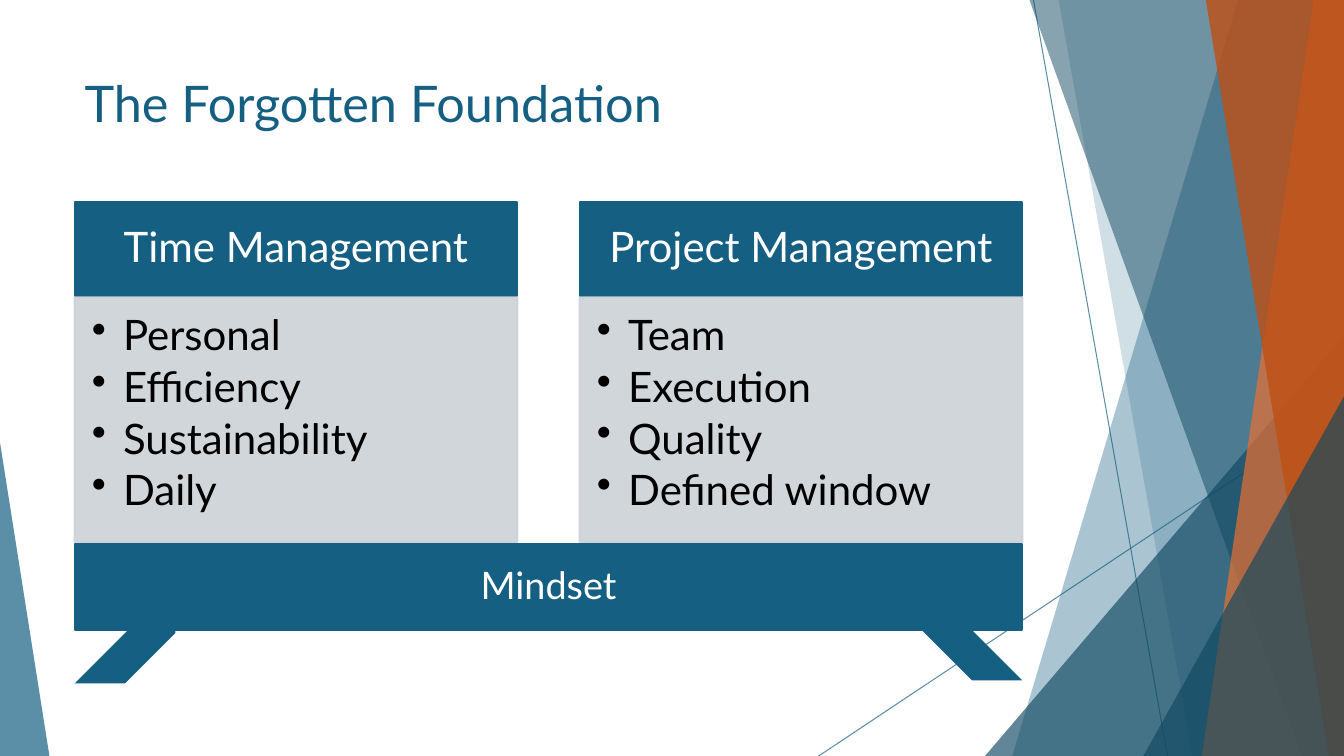
from lxml.etree import SubElement
from pptx import Presentation
from pptx.dml.color import RGBColor
from pptx.enum.shapes import MSO_CONNECTOR as CONNECTOR, MSO_SHAPE as SHAPE
from pptx.enum.text import MSO_ANCHOR as ANCHOR, PP_ALIGN as ALIGN
from pptx.oxml.ns import qn
from pptx.util import Pt

PX = 9144
WIDTH, HEIGHT = 1333, 750
COLORS = {
    "blue": "156082",
    "navy": "104862",
    "orange": "E97132",
    "rust": "C04F15",
    "grey": "CCD2D8",
    "white": "FFFFFF",
    "black": "000000",
}


class SlideBuilder:
    font_name = "Lato"

    def __init__(self, slide):
        self.slide = slide
        self.shapes = slide.shapes

    def paint(self, fill, color, opacity=100):
        fill.solid()
        fill.fore_color.rgb = RGBColor.from_string(COLORS[color])
        if opacity < 100:
            for rgb in fill._xPr.find(qn("a:solidFill")).iter(qn("a:srgbClr")):
                SubElement(rgb, qn("a:alpha"), val=str(opacity * 1000))

    def finish(self, shape, color, opacity, outline=0):
        shape.shadow.inherit = False
        self.paint(shape.fill, color, opacity)
        if outline:
            shape.line.width = Pt(outline)
            self.paint(shape.line.fill, color, opacity)
        else:
            shape.line.fill.background()
        return shape

    def shape(self, kind, box, color, opacity=100, outline=0, **format_values):
        shape = self.shapes.add_shape(kind, *(n * PX for n in box))
        adjust = format_values.pop("adjust", None)
        if adjust is not None:
            shape.adjustments[0] = adjust
        for name, value in format_values.items():
            setattr(shape, name, value)
        return self.finish(shape, color, opacity, outline)

    def facet(self, points, color, opacity):
        outline = self.shapes.build_freeform(*points[0], scale=PX)
        outline.add_line_segments(points[1:], close=True)
        return self.finish(outline.convert_to_shape(), color, opacity)

    def line(self, start, end, color, opacity):
        line = self.shapes.add_connector(
            CONNECTOR.STRAIGHT, *(n * PX for n in (*start, *end)))
        line.line.width = Pt(0.75)
        self.paint(line.line.fill, color, opacity)
        SubElement(line._element.spPr, qn("a:effectLst"))

    def label(self, shape, lines, size, color, insets, anchor=ANCHOR.MIDDLE,
              bullets=False, **paragraph_values):
        frame = shape.text_frame
        sides = ("margin_left", "margin_top", "margin_right", "margin_bottom")
        frame_values = dict(zip(sides, (n * PX for n in insets)))
        frame_values |= {"word_wrap": True, "vertical_anchor": anchor}
        for name, value in frame_values.items():
            setattr(frame, name, value)
        font_values = {"name": self.font_name, "size": Pt(size)}
        for index, text in enumerate(lines):
            paragraph = frame.add_paragraph() if index else frame.paragraphs[0]
            for name, value in paragraph_values.items():
                setattr(paragraph, name, value)
            if bullets:
                properties = paragraph._p.get_or_add_pPr()
                properties.set("marL", str(31 * PX))
                properties.set("indent", str(-31 * PX))
                SubElement(properties, qn("a:buChar"), char="•")
            run = paragraph.add_run()
            run.text = text
            for name, value in font_values.items():
                setattr(run.font, name, value)
            run.font.color.rgb = RGBColor.from_string(COLORS[color])

    def title(self, text, box):
        title = self.shapes.add_textbox(*(n * PX for n in box))
        self.label(title, [text], 36, "blue", (10, 5, 10, 5), ANCHOR.TOP)

    def banner(self, text, box, size, insets):
        banner = self.shape(SHAPE.RECTANGLE, box, "blue", outline=1.5)
        self.label(banner, [text], size, "white", insets,
                   alignment=ALIGN.CENTER, line_spacing=0.9)

    def panel(self, items, box):
        panel = self.shape(SHAPE.RECTANGLE, box, "grey", 90, outline=1.5)
        self.label(panel, items, 30, "black", (17, 17, 23, 26), ANCHOR.TOP,
                   bullets=True, alignment=ALIGN.LEFT, line_spacing=0.9,
                   space_after=Pt(4.5))


def draw_backdrop(builder):
    builder.line((1025, 0), (1158, HEIGHT), "blue", 70)
    builder.line((WIDTH, 403), (812, HEIGHT), "blue", 70)

    def facet(top, bottom, color, opacity):
        corners = [(top, 0), (WIDTH, 0), (WIDTH, HEIGHT), (bottom, HEIGHT)]
        builder.facet(corners, color, opacity)

    def wedge(left, top, width, color, opacity, apex):
        builder.shape(SHAPE.ISOSCELES_TRIANGLE,
                      (left, top, width, HEIGHT - top), color, opacity, adjust=apex)

    facet(1228, 1004, "blue", 36)
    facet(1050, 1183, "blue", 20)
    wedge(977, 333, 356, "navy", 66, 1)
    facet(1021, 1291, "navy", 50)
    facet(1303, 1192, "orange", 70)
    facet(1196, 1318, "rust", 80)
    wedge(1134, 393, 199, "navy", 66, 1)
    wedge(0, 439, 49, "blue", 70, 0)


def main():
    presentation = Presentation()
    presentation.slide_width = WIDTH * PX
    presentation.slide_height = HEIGHT * PX
    builder = SlideBuilder(presentation.slides.add_slide(presentation.slide_layouts[6]))

    draw_backdrop(builder)
    left, span, column_width = 74, 940, 439
    builder.title("The Forgotten Foundation", (left, 67, span, 144))

    pillars = {
        "Time Management": ["Personal", "Efficiency", "Sustainability", "Daily"],
        "Project Management": ["Team", "Execution", "Quality", "Defined window"],
    }
    for index, (heading, items) in enumerate(pillars.items()):
        x = left + index * (span - column_width)
        builder.banner(heading, (x, 200, column_width, 94), 30, (23, 13, 23, 13))
        builder.panel(items, (x, 295, column_width, 243))

    builder.banner("Mindset", (left, 540, span, 85), 27, (21, 12, 21, 12))
    foot = 100
    for x, y, rotation in ((left, 578, 180), (left + span - foot, 575, 270)):
        builder.shape(SHAPE.DIAGONAL_STRIPE, (x, y, foot, foot), "blue",
                      rotation=rotation)

    presentation.save("out.pptx")


if __name__ == "__main__":
    main()
